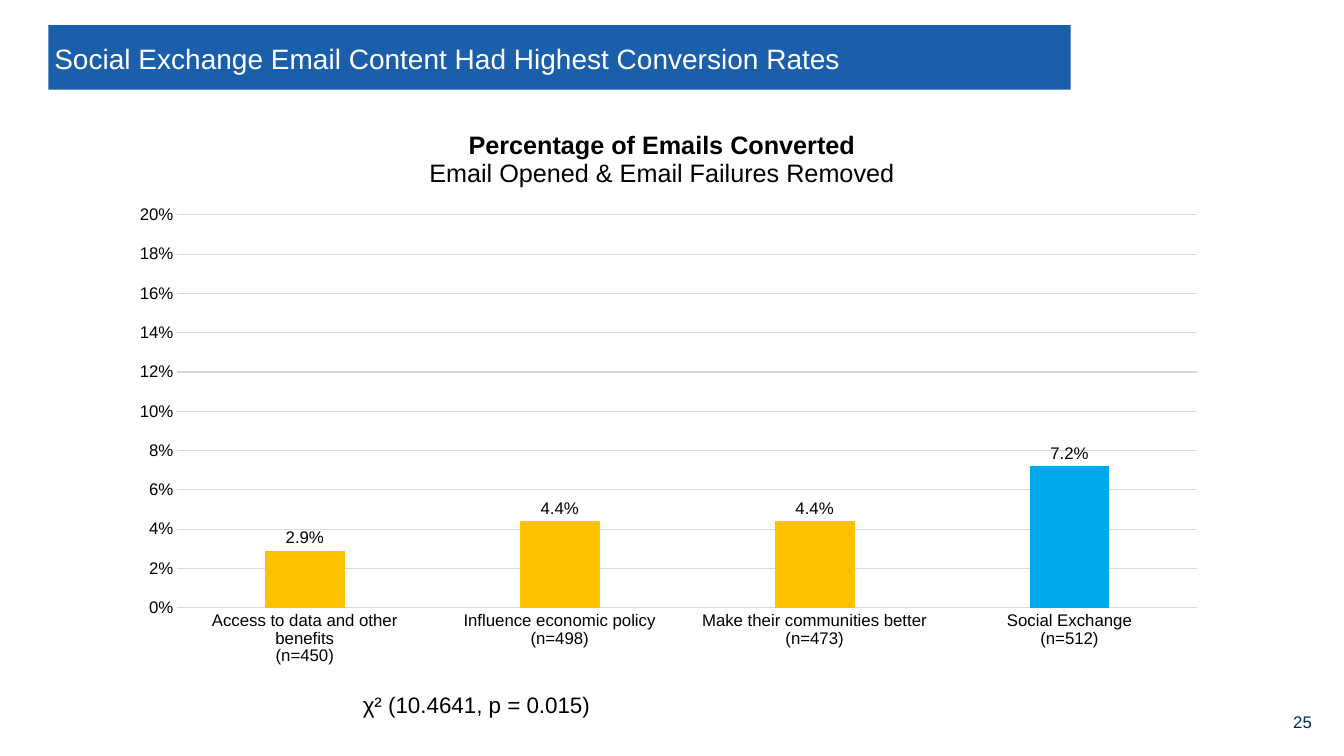
from lxml import etree
from pptx import Presentation
from pptx import util as u
from pptx.chart.data import CategoryChartData
from pptx.dml.color import RGBColor
from pptx.enum import chart as charts, shapes, text
from pptx.oxml import parse_xml
from pptx.oxml.ns import nsdecls

COLORS = {
    "banner": "1B5FAA", "white": "FFFFFF", "navy": "002A59", "black": "000000",
    "grid": "D9D9D9", "amber": "FFC000", "sky": "00A9E7",
}
RATES = {
    "Access to data and other benefits\n(n=450)": 0.029,
    "Influence economic policy\n(n=498)": 0.044,
    "Make their communities better\n(n=473)": 0.044,
    "Social Exchange\n(n=512)": 0.072,
}


class SlideBuilder:
    """Hold the style and current slide, and add styled elements to it."""

    def __init__(self, page, font="Arial"):
        self.page = page
        self.font = font

    def color(self, name):
        return RGBColor.from_string(COLORS[name])

    def style(self, font, size, color, bold=False):
        font.name = self.font
        font.size = u.Pt(size)
        font.bold = bold
        font.color.rgb = self.color(color)

    def fill(self, target, color):
        target.fill.solid()
        target.fill.fore_color.rgb = self.color(color)

    def bar(self, place, color):
        shape = self.page.shapes.add_shape(shapes.MSO_SHAPE.RECTANGLE, *map(u.Inches, place))
        shape.shadow.inherit = False
        self.fill(shape, color)
        shape.line.fill.background()

    def label(self, place, words, size, color, align=text.PP_ALIGN.LEFT,
              anchor=text.MSO_ANCHOR.MIDDLE):
        box = self.page.shapes.add_textbox(*map(u.Inches, place))
        frame = box.text_frame
        frame.word_wrap = True
        frame.vertical_anchor = anchor
        frame.text = words
        para = frame.paragraphs[0]
        para.alignment = align
        self.style(para.runs[0].font, size, color)

    def layout(self, parent, position, **values):
        modes = {"xMode": "edge", "yMode": "edge"}
        if "w" in values:
            modes = {"layoutTarget": "inner", **modes}
        items = "".join(f'<c:{key} val="{value}"/>' for key, value in {**modes, **values}.items())
        for old in parent.findall("{*}layout"):
            parent.remove(old)
        parent.insert(position, parse_xml(
            f'<c:layout {nsdecls("c")}><c:manualLayout>{items}</c:manualLayout></c:layout>'))

    def chart_title(self, chart, lines):
        frame = chart.chart_title.text_frame
        frame.text = "\n".join(lines)
        for index, para in enumerate(frame.paragraphs):
            self.style(para.runs[0].font, 18, "black", bold=index == 0)
        chart.chart_title.include_in_layout = False

    def axes(self, chart):
        for axis in (chart.category_axis, chart.value_axis):
            axis.major_tick_mark = axis.minor_tick_mark = charts.XL_TICK_MARK.NONE
            self.style(axis.tick_labels.font, 12, "black")
        values = chart.value_axis
        values.minimum_scale, values.maximum_scale, values.major_unit = 0, 0.2, 0.02
        values.tick_labels.number_format = "0%"
        values.tick_labels.number_format_is_linked = False
        values.format.line.fill.background()
        for line in (chart.category_axis.format.line, values.major_gridlines.format.line):
            line.color.rgb = self.color("grid")
            line.width = u.Pt(0.75)

    def column_chart(self, place, lines, rates, highlight):
        data = CategoryChartData(number_format="0.0%")
        data.categories = list(rates)
        data.add_series("Series 1", list(rates.values()))
        chart = self.page.shapes.add_chart(
            charts.XL_CHART_TYPE.COLUMN_CLUSTERED, *map(u.Inches, place), data).chart
        self.style(chart.font, 10, "navy")
        chart.has_legend = False
        self.chart_title(chart, lines)
        self.axes(chart)
        self.layout(chart.plots[0]._element.getparent(), 0, x=0.054, y=0.187, w=0.926, h=0.692)
        plot = chart.plots[0]
        plot.vary_by_categories = False
        plot.gap_width, plot.overlap = 219, -27
        series = plot.series[0]
        self.fill(series.format, "amber")
        self.fill(series.points[highlight].format, "sky")
        labels = series.data_labels
        labels.show_value = True
        labels.position = charts.XL_LABEL_POSITION.OUTSIDE_END
        labels.number_format = "0.0%"
        labels.number_format_is_linked = False
        self.style(labels.font, 12, "black")
        title = chart.chart_title._element
        self.layout(title, 1, x=0.28, y=0.03)


def main():
    deck = Presentation()
    deck.slide_width, deck.slide_height = u.Inches(13.33), u.Inches(7.5)
    builder = SlideBuilder(deck.slides.add_slide(deck.slide_layouts[6]))
    builder.bar((0.48, 0.25, 10.14, 0.64), "banner")
    builder.label((12.44, 7, 0.67, 0.33), "25", 12, "navy", text.PP_ALIGN.RIGHT)
    builder.label((0.44, 0.25, 10.18, 0.66),
                  "Social Exchange Email Content Had Highest Conversion Rates", 20, "white")
    builder.column_chart(
        (1.17, 1.08, 10.92, 5.63),
        ("Percentage of Emails Converted", "Email Opened & Email Failures Removed"),
        RATES, highlight=3)
    builder.label((3.5, 6.81, 8.33, 0.37), "χ² (10.4641, p = 0.015)", 16, "black",
                  anchor=text.MSO_ANCHOR.TOP)
    deck.save("out.pptx")


if __name__ == "__main__":
    main()
